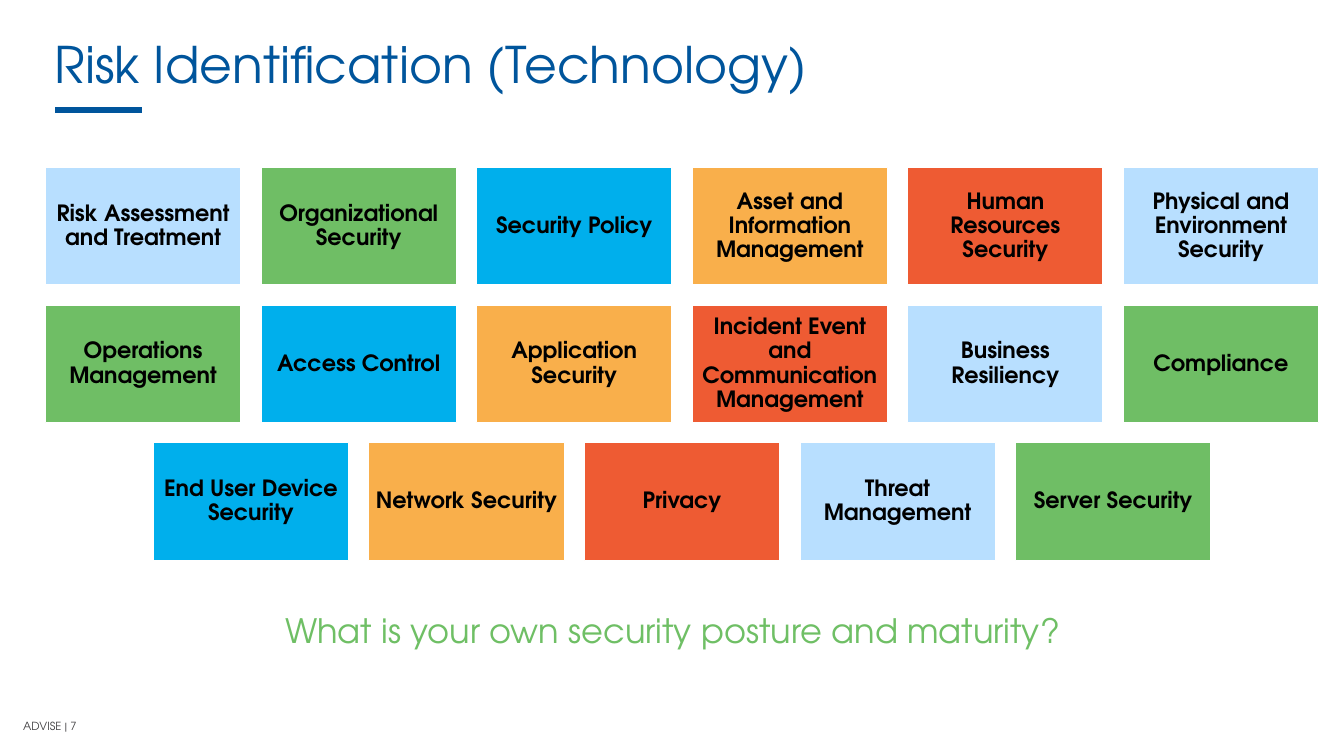
import pptx
import pptx.util
import pptx.dml.color
import pptx.enum.shapes
import pptx.enum.text
import lxml.etree

Inches = pptx.util.Inches
Pt = pptx.util.Pt
RGBColor = pptx.dml.color.RGBColor
Align = pptx.enum.text.PP_ALIGN
Anchor = pptx.enum.text.MSO_ANCHOR

FONT = "TeX Gyre Adventor"
NAVY = RGBColor(0x00, 0x55, 0x9C)
GRAY = RGBColor(0x41, 0x40, 0x42)
BLACK = RGBColor(0x00, 0x00, 0x00)
WHITE = RGBColor(0xFF, 0xFF, 0xFF)
PALE = RGBColor(0xB8, 0xDF, 0xFF)
GREEN = RGBColor(0x6F, 0xBE, 0x65)
BLUE = RGBColor(0x00, 0xAF, 0xEC)
AMBER = RGBColor(0xF9, 0xAF, 0x4B)
RED = RGBColor(0xEE, 0x5B, 0x33)
LIME = RGBColor(0x6F, 0xBF, 0x65)


def write(shape, text, size, color, bold=False, align=Align.LEFT,
          anchor=Anchor.TOP, space=1.0, side=0.1, edge=0.05):
    frame = shape.text_frame
    frame.word_wrap = True
    frame.auto_size = pptx.enum.text.MSO_AUTO_SIZE.NONE
    frame.vertical_anchor = anchor
    frame.margin_left = frame.margin_right = Inches(side)
    frame.margin_top = frame.margin_bottom = Inches(edge)
    para = frame.paragraphs[0]
    para.alignment = align
    para.line_spacing = space
    run = para.add_run()
    run.text = text
    run.font.name = FONT
    run.font.size = Pt(size)
    run.font.bold = bold
    run.font.color.rgb = color


deck = pptx.Presentation()
deck.slide_width = Inches(13.33)
deck.slide_height = Inches(7.5)
slide = deck.slides.add_slide(deck.slide_layouts[5])
shapes = slide.shapes

# Title and its underline
title = shapes.title
title.left, title.top = Inches(0.44), Inches(0.19)
title.width, title.height = Inches(12.43), Inches(0.8)
write(title, "Risk Identification (Technology)", 36, NAVY,
      anchor=Anchor.BOTTOM, space=0.9)

rule = shapes.add_connector(pptx.enum.shapes.MSO_CONNECTOR.STRAIGHT,
                            Inches(0.55), Inches(1.09),
                            Inches(1.41), Inches(1.09))
rule.line.color.rgb = NAVY
rule.line.width = Pt(4.5)
lxml.etree.SubElement(rule.element.spPr, pptx.oxml.ns.qn("a:effectLst"))

# Tiles: colours cycle through all rows, and a short row is centred
rows = [
    ["Risk Assessment and Treatment", "Organizational Security",
     "Security Policy", "Asset and Information Management",
     "Human Resources Security", "Physical and Environment Security"],
    ["Operations Management", "Access Control", "Application Security",
     "Incident Event and Communication Management",
     "Business Resiliency", "Compliance"],
    ["End User Device Security", "Network Security", "Privacy",
     "Threat Management", "Server Security"],
]
fills = [PALE, GREEN, BLUE, AMBER, RED]
step_x = (11.14 - 0.45) / 5
step_y = (4.39 - 1.66) / 2
count = 0
for row, names in enumerate(rows):
    start = 0.45 + (6 - len(names)) * step_x / 2
    for col, name in enumerate(names):
        tile = shapes.add_shape(pptx.enum.shapes.MSO_SHAPE.RECTANGLE,
                                Inches(start + col * step_x),
                                Inches(1.66 + row * step_y),
                                Inches(1.94), Inches(1.17))
        tile.shadow.inherit = False
        tile.fill.solid()
        tile.fill.fore_color.rgb = fills[count % len(fills)]
        tile.line.color.rgb = WHITE
        tile.line.width = Pt(1)
        write(tile, name, 16, BLACK, bold=True, align=Align.CENTER,
              anchor=Anchor.MIDDLE, space=0.9, side=0.06, edge=0.07)
        count += 1

# Closing question
ask = shapes.add_textbox(Inches(1.77), Inches(6), Inches(9.8), Inches(0.5))
write(ask, "What is your own security posture and maturity?", 24, LIME,
      align=Align.CENTER)

# Footer
foot = shapes.add_textbox(Inches(0.1), Inches(6.87), Inches(2.98), Inches(0.45))
write(foot, "ADVISE | 7", 8, GRAY, anchor=Anchor.BOTTOM, side=0.13)

deck.save("out.pptx")
